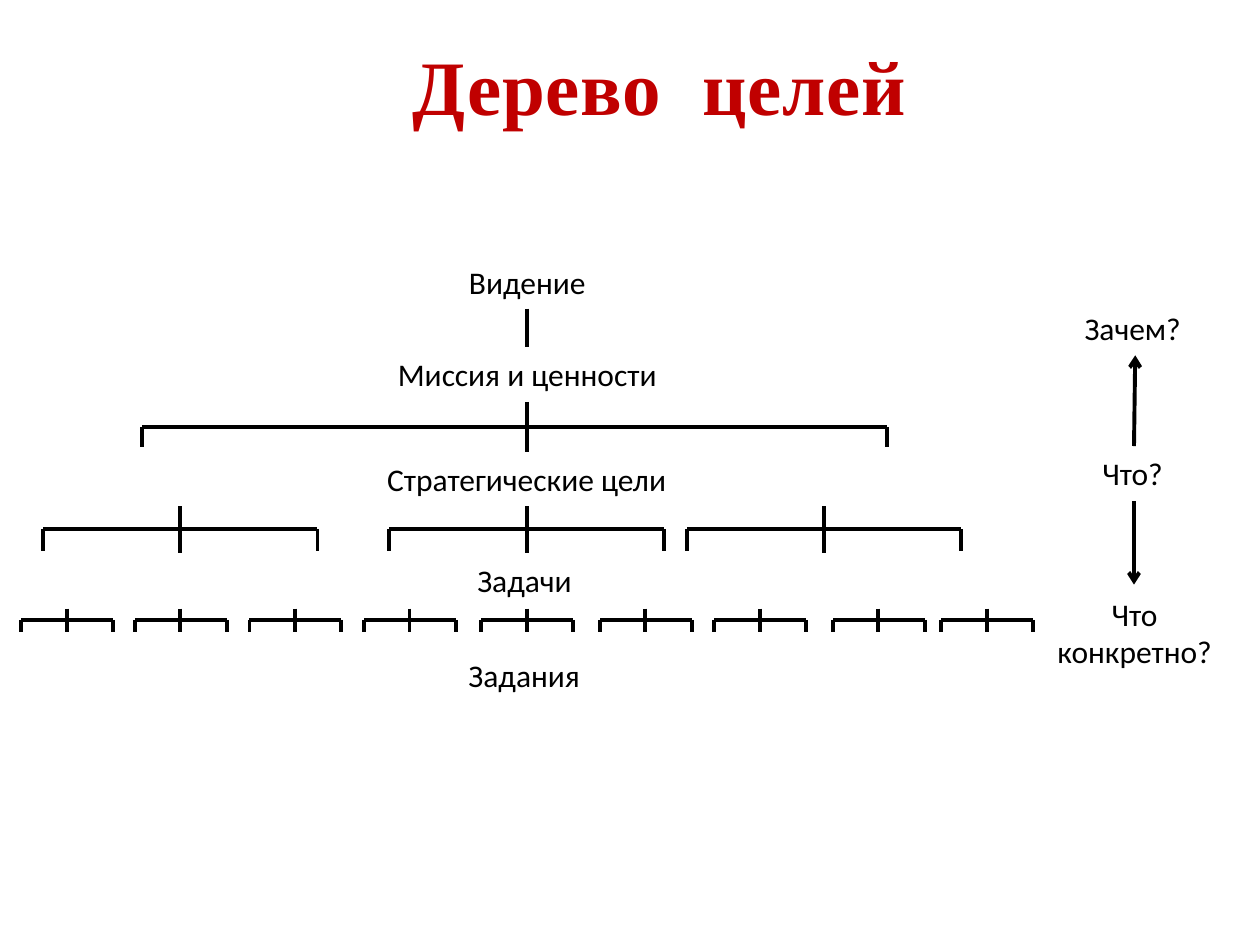
from lxml import etree
from pptx import Presentation
from pptx.dml.color import RGBColor
from pptx.enum.shapes import MSO_CONNECTOR
from pptx.enum.text import MSO_ANCHOR, PP_ALIGN
from pptx.oxml.ns import qn
from pptx.util import Inches, Pt

BLACK = RGBColor(0, 0, 0)
RED = RGBColor(0xC0, 0, 0)
STRAIGHT = MSO_CONNECTOR.STRAIGHT
MIDDLE = MSO_ANCHOR.MIDDLE
LEFT, CENTER = PP_ALIGN.LEFT, PP_ALIGN.CENTER


def write(tf, text, font="Calibri", size=18, color=BLACK, bold=False,
          align=CENTER, spacing=0):
    for i, line in enumerate(text.split("\n")):
        p = tf.add_paragraph() if i else tf.paragraphs[0]
        p.alignment = align
        r = p.add_run()
        r.text = line
        r.font.name = font
        r.font.size = Pt(size)
        r.font.bold = bold
        r.font.color.rgb = color
        if spacing:
            r._r.get_or_add_rPr().set("spc", str(int(spacing * 100)))


class GoalTree:
    def __init__(self, s, color=BLACK, width=2.25):
        self.s = s
        self.color = color
        self.width = width

    def text(self, x, y, w, h, text, wrap=False, **fmt):
        sp = self.s.shapes.add_textbox(Inches(x), Inches(y), Inches(w), Inches(h))
        tf = sp.text_frame
        tf.word_wrap = wrap
        tf.vertical_anchor = MIDDLE
        write(tf, text, **fmt)

    def line(self, x1, y1, x2, y2, arrow=False):
        c = self.s.shapes.add_connector(
            STRAIGHT, Inches(x1), Inches(y1), Inches(x2), Inches(y2))
        c.line.color.rgb = self.color
        c.line.width = Pt(self.width)
        if arrow:
            etree.SubElement(c.line._get_or_add_ln(), qn("a:tailEnd"), type="arrow")
        etree.SubElement(c._element.spPr, qn("a:effectLst"))

    def bracket(self, left, right, stem, top, bar, foot, stem_end):
        self.line(stem, top, stem, stem_end)
        self.line(right, bar, left, bar)
        for x in (left, right):
            self.line(x, bar, x, foot)


def main():
    prs = Presentation()
    prs.slide_width, prs.slide_height = Inches(10), Inches(7.5)
    s = prs.slides.add_slide(prs.slide_layouts[6])
    tree = GoalTree(s)

    levels = [
        (3.6, 2.02, 1.17, "Видение", CENTER),
        (3.01, 2.75, 2.35, "Миссия и ценности", CENTER),
        (2.92, 3.59, 2.52, "Стратегические цели", CENTER),
        (3.69, 4.39, 0.99, "Задачи", LEFT),
        (3.62, 5.14, 1.13, "Задания", LEFT),
        (8.65, 3.54, 0.71, "Что?", LEFT),
        (8.51, 2.39, 1, "Зачем?", LEFT),
    ]
    for x, y, w, label, align in levels:
        tree.text(x, y, w, 0.43, label, align=align)
    tree.text(8.26, 4.64, 1.49, 0.76, "Что\nконкретно?")

    tree.line(4.18, 2.45, 4.18, 2.75)
    tree.bracket(1.13, 7.04, 4.18, 3.19, 3.39, 3.55, 3.59)
    for x in (1.43, 4.18, 6.54):
        tree.bracket(x - 1.09, x + 1.09, x, 4.02, 4.2, 4.37, 4.39)
    for x in (0.53, 1.43, 2.34, 3.25, 4.18, 5.12, 6.03, 6.97, 7.83):
        tree.bracket(x - 0.36, x + 0.37, x, 4.83, 4.92, 5.02, 5.02)

    tree.line(9, 3.54, 9.01, 2.82, arrow=True)
    tree.line(9, 3.98, 9, 4.64, arrow=True)
    tree.text(2.13, 0.25, 6.21, 0.84, "Дерево  целей", wrap=True,
              font="Times New Roman", size=44, color=RED, bold=True, spacing=0.5)
    prs.save("out.pptx")


if __name__ == "__main__":
    main()
